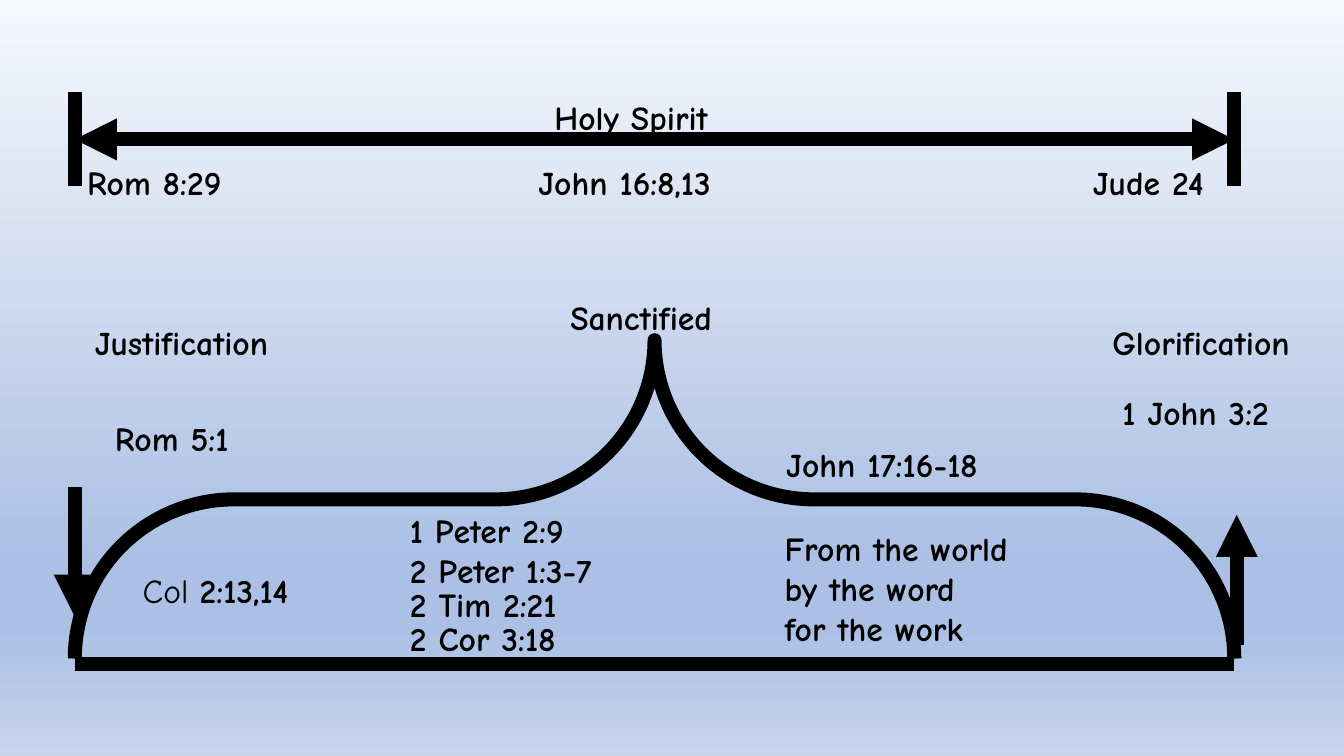
import copy
import lxml.etree
import pptx
import pptx.dml.color
import pptx.enum.shapes
import pptx.enum.text
import pptx.oxml.ns
import pptx.util

BLACK = pptx.dml.color.RGBColor(0x00, 0x00, 0x00)
PALE = pptx.dml.color.RGBColor(0xF6, 0xF8, 0xFC)
BLUE = pptx.dml.color.RGBColor(0xAB, 0xC0, 0xE4)
SOFT = pptx.dml.color.RGBColor(0xC7, 0xD5, 0xED)
FONT = "Comic Neue"
STROKE = pptx.util.Pt(10)
qn = pptx.oxml.ns.qn

prs = pptx.Presentation()
prs.slide_width = pptx.util.Inches(13.33)
prs.slide_height = pptx.util.Inches(7.5)
CELL = prs.slide_height / 90
LEFT, RIGHT = 8.9, 146.9
BRACE_TOP, BRACE_BOTTOM = 40.5, 78.4
LINE_H = 4.9


def grid(*cells):
    return [round(c * CELL) for c in cells]


s = prs.slides.add_slide(prs.slide_layouts[6])
fill = s.background.fill
fill.gradient()
fill.gradient_angle = 270
stops = next(s.element.iter(qn("a:gsLst")))
for _ in range(2):
    stops.append(copy.deepcopy(stops[0]))
colours = [(0, PALE), (0.74, BLUE), (0.83, BLUE), (1, SOFT)]
for stop, (position, colour) in zip(fill.gradient_stops, colours):
    stop.position = position
    stop.color.rgb = colour

lines = [
    (LEFT, 79, RIGHT, 79, []),
    (LEFT, 16.6, RIGHT, 16.6, ["a:headEnd", "a:tailEnd"]),
    (LEFT, 11, LEFT, 22.2, []),
    (RIGHT, 11, RIGHT, 22.2, []),
    (LEFT, 58, LEFT, 73.4, ["a:tailEnd"]),
    (147.2, 76.8, 147.2, 61.3, ["a:tailEnd"]),
]
for x1, y1, x2, y2, arrows in lines:
    sp = s.shapes.add_connector(
        pptx.enum.shapes.MSO_CONNECTOR.STRAIGHT, *grid(x1, y1, x2, y2))
    sp.line.color.rgb = BLACK
    sp.line.width = STROKE
    ln = next(sp.element.iter(qn("a:ln")))
    for end in arrows:
        lxml.etree.SubElement(ln, qn(end), type="triangle")
    lxml.etree.SubElement(ln.getparent(), qn("a:effectLst"))

depth, length = BRACE_BOTTOM - BRACE_TOP, RIGHT - LEFT
sp = s.shapes.add_shape(
    pptx.enum.shapes.MSO_SHAPE.LEFT_BRACE,
    *grid((LEFT + RIGHT - depth) / 2, (BRACE_TOP + BRACE_BOTTOM - length) / 2,
          depth, length))
sp.rotation = 90
sp.adjustments[0] = 0.5
sp.adjustments[1] = 0.5
sp.shadow.inherit = False
sp.fill.background()
sp.line.color.rgb = BLACK
sp.line.width = STROKE

labels = [
    (64.8, 10.9, 23.8, LINE_H, ["Holy Spirit"]),
    (10.1, 37.7, 26.9, LINE_H, ["Justification"]),
    (131.2, 37.7, 26.2, LINE_H, ["Glorification"]),
    (62.9, 18.7, 29.3, LINE_H, ["John 16:8,13"]),
    (9.2, 18.7, 21.1, LINE_H, ["Rom 8:29"]),
    (128.9, 18.7, 18.5, LINE_H, ["Jude 24"]),
    (15.8, 67.3, 25.1, LINE_H, ["Col 2:13,14"]),
    (132.4, 46.1, 24.4, LINE_H, ["1 John 3:2"]),
    (47.6, 60.1, 30.5, 2 * LINE_H, ["1 Peter 2:9", "2 Peter 1:3-7"]),
    (47.6, 68.9, 24.6, LINE_H, ["2 Tim 2:21"]),
    (47.6, 73, 24.1, LINE_H, ["2 Cor 3:18"]),
    (66.7, 34.7, 22.6, LINE_H, ["Sanctified"]),
    (92.2, 62.2, 32.4, 3 * LINE_H,
     ["From the world", "by the word", "for the work"]),
    (92.4, 52.2, 32.4, LINE_H, ["John 17:16-18"]),
    (12.5, 49.1, 18.7, LINE_H, ["Rom 5:1"]),
]
for x, y, w, h, texts in labels:
    sp = s.shapes.add_textbox(*grid(x, y, w, h))
    tf = sp.text_frame
    tf.word_wrap = False
    tf.auto_size = pptx.enum.text.MSO_AUTO_SIZE.SHAPE_TO_FIT_TEXT
    for i, text in enumerate(texts):
        p = tf.paragraphs[0] if i == 0 else tf.add_paragraph()
        p.font.name = FONT
        p.font.size = pptx.util.Pt(24)
        p.font.color.rgb = BLACK
        if text.startswith("Col "):
            p.add_run().text = "Col "
            r = p.add_run()
            r.text = text[4:]
            r.font.bold = True
        else:
            p.add_run().text = text
            p.font.bold = True

prs.save("out.pptx")
